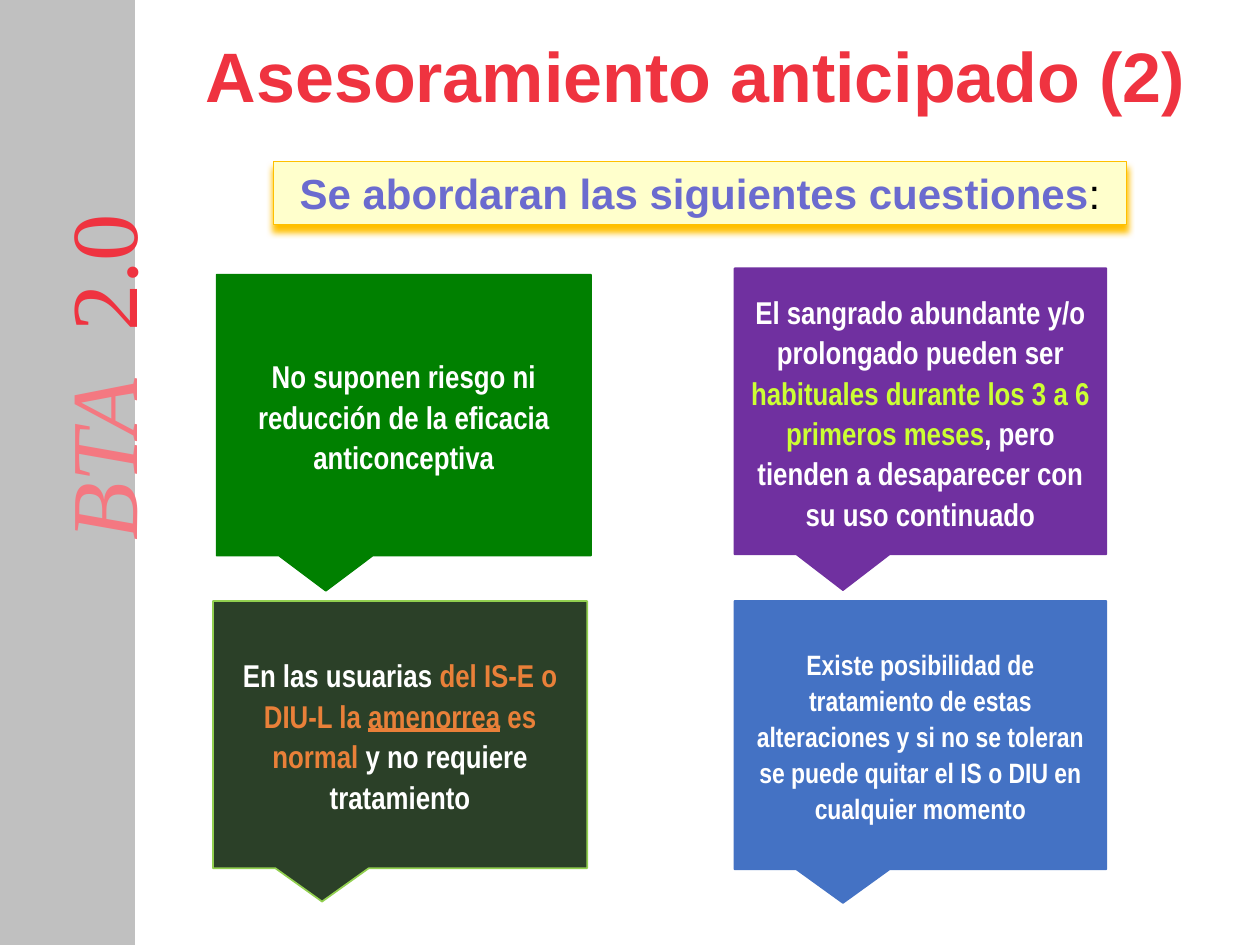
"""Slide with a title, a banner and four callouts beside a vertical label."""
from lxml.etree import SubElement
from pptx import Presentation
from pptx.dml.color import RGBColor
from pptx.enum.shapes import MSO_SHAPE
from pptx.enum.text import MSO_ANCHOR, PP_ALIGN
from pptx.oxml.ns import qn
from pptx.util import Inches, Pt

prs = Presentation()
prs.slide_width, prs.slide_height = Inches(10), Inches(7.5)
s = prs.slides.add_slide(prs.slide_layouts[6])
col, row = prs.slide_width / 100, prs.slide_height / 75
rgb = RGBColor.from_string


def add_box(at, kind=None, fill=None, line=None, width=1):
    x, y, w, h = at
    pos = [int(n) for n in (x * col, y * row, w * col, h * row)]
    if kind is None:
        sp = s.shapes.add_textbox(*pos)
    else:
        sp = s.shapes.add_shape(kind, *pos)
        sp.shadow.inherit = False
        sp.fill.solid()
        sp.fill.fore_color.rgb = rgb(fill)
        sp.line.color.rgb = rgb(line)
        sp.line.width = Pt(width)
    sp.text_frame.word_wrap = True
    sp.text_frame.vertical_anchor = MSO_ANCHOR.TOP
    return sp


def add_run(p, text, size, font, color, bold=True, italic=False, underline=False):
    r = p.add_run()
    r.text = text
    r.font.size, r.font.name = Pt(size), font
    r.font.color.rgb = rgb(color)
    r.font.bold, r.font.italic, r.font.underline = bold, italic, underline
    return r


add_box((0, 0, 10.7, 75), MSO_SHAPE.RECTANGLE, "C0C0C0", "C0C0C0", 0.75)

label = add_box((-8.45, 22.9, 32.3, 9.6))
label.rotation = 270
p = label.text_frame.paragraphs[0]
add_run(p, "BTA", 54, "Times New Roman", "F47881", False, True)
gap = add_run(p, " ", 54, "Times New Roman", "F47881", False, True)
gap.font._element.set("spc", "1350")
add_run(p, "2.0", 54, "Times New Roman", "EF3340", False)

title = add_box((12.1, 2.1, 86.2, 6.6))
p = title.text_frame.paragraphs[0]
p.alignment = PP_ALIGN.CENTER
add_run(p, "Asesoramiento anticipado (2)", 40, "Arial", "EF3340")

W, G, O, L = "FFFFFF", "008000", "E98039", "CCFF33"
callouts = [
    ((17.2, 21.8, 29.7, 22.3), G, G, 18, [
        [("No suponen riesgo ni", W)],
        [("reducción de la eficacia anticonceptiva", W)]]),
    ((58.3, 21.3, 29.5, 22.7), "7030A0", "7030A0", 18, [
        [("El sangrado abundante y/o prolongado pueden ser ", W),
         ("habituales durante los 3 a 6 primeros meses", L),
         (", pero tienden a desaparecer con su uso continuado", W)]]),
    ((16.9, 47.7, 29.7, 21.2), "2B4028", "92D050", 18, [
        [("En las usuarias ", W), ("del IS-E o DIU-L la ", O),
         ("amenorrea", O, True), (" es normal ", O),
         ("y no requiere tratamiento", W)]]),
    ((58.3, 47.7, 29.5, 21.3), "4472C4", "4472C4", 16, [
        [("Existe posibilidad de tratamiento de estas alteraciones y si no se "
          "toleran se puede quitar el IS o DIU en cualquier momento", W)]]),
]
for at, fill, line, size, paragraphs in callouts:
    tf = add_box(at, MSO_SHAPE.RECTANGULAR_CALLOUT, fill, line).text_frame
    tf.vertical_anchor = MSO_ANCHOR.MIDDLE
    for i, runs in enumerate(paragraphs):
        p = tf.add_paragraph() if i else tf.paragraphs[0]
        p.alignment, p.line_spacing = PP_ALIGN.CENTER, 1.07
        for text, color, *under in runs:
            add_run(p, text, size, "Arial Narrow", color, underline=bool(under))

banner = add_box((21.7, 12.8, 67.7, 5), MSO_SHAPE.RECTANGLE, "FFFFCC", "FFC000", 0.75)
effects = banner._element.spPr.find(qn("a:effectLst"))
shadow = SubElement(effects, qn("a:outerShdw"), blurRad=str(Pt(4)), dist=str(Pt(4)),
                    dir="5400000", algn="t", rotWithShape="0")
SubElement(shadow, qn("a:srgbClr"), val="FFC000")
p = banner.text_frame.paragraphs[0]
p.alignment = PP_ALIGN.CENTER
add_run(p, "Se abordaran las siguientes cuestiones", 24, "Arial", "6B6BCF")
add_run(p, ":", 24, "Arial", "000000", False)

prs.save("out.pptx")
